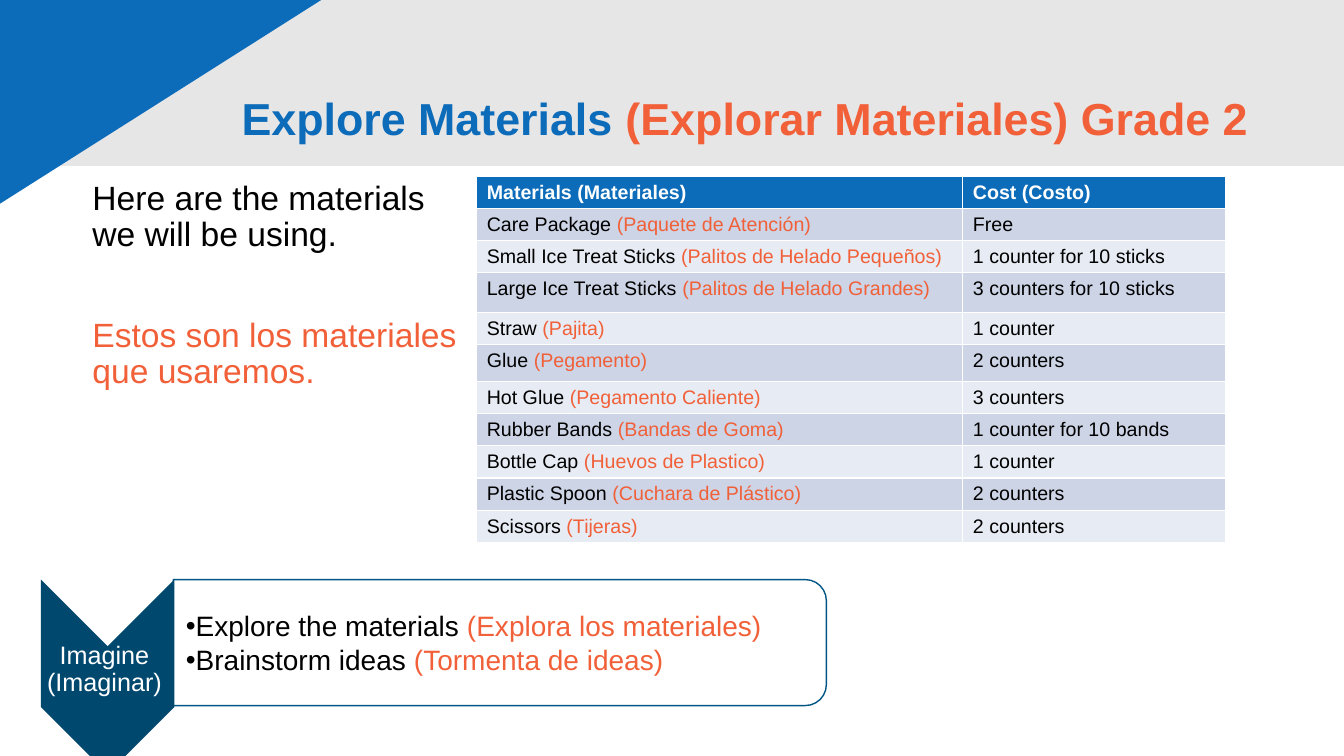
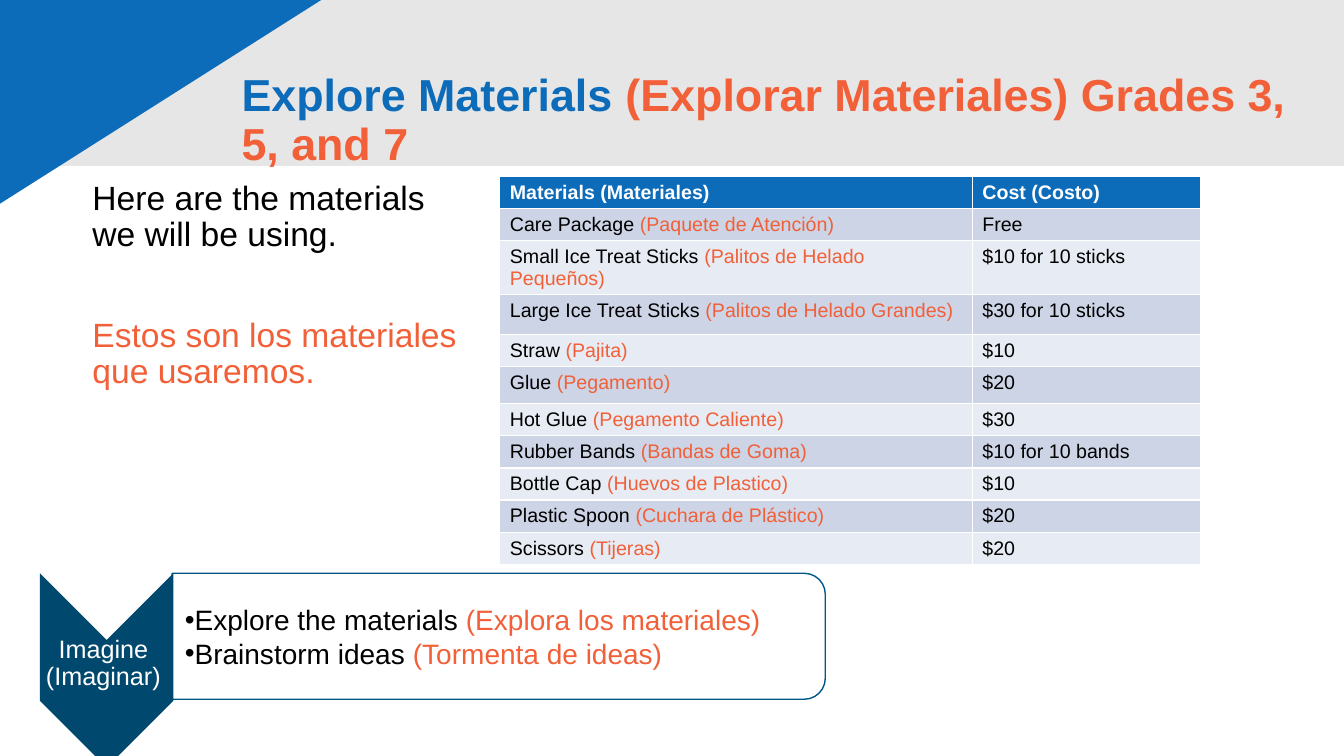
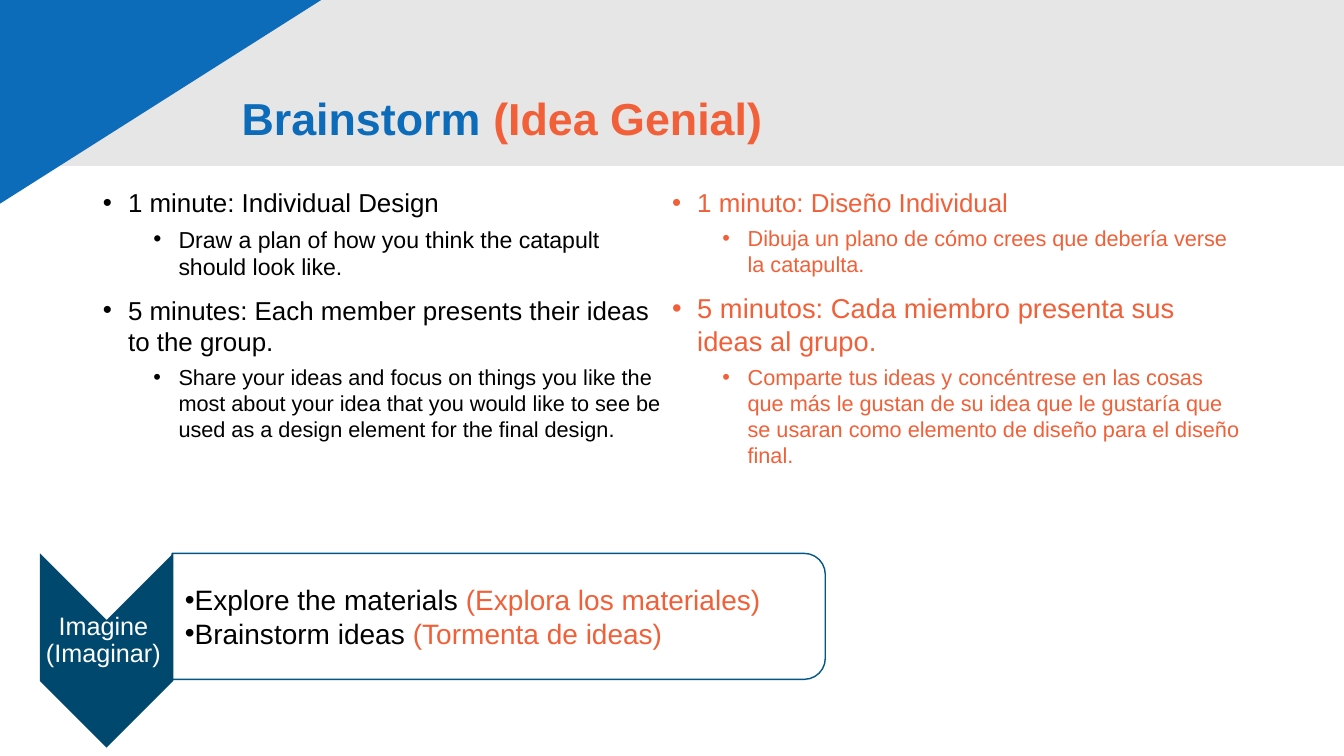
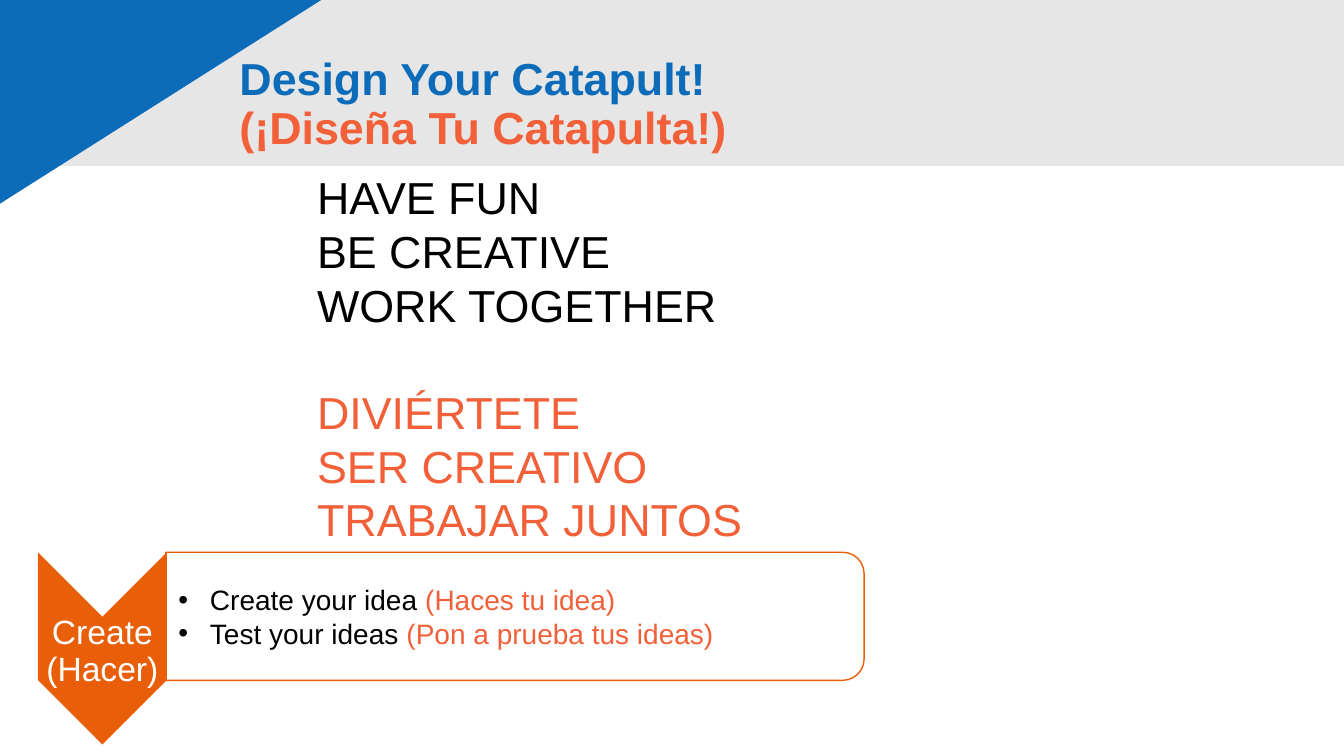
from lxml import etree
from pptx import Presentation
from pptx.dml.color import RGBColor
from pptx.enum.shapes import MSO_SHAPE
from pptx.enum.text import MSO_ANCHOR, MSO_AUTO_SIZE, PP_ALIGN
from pptx.oxml.ns import qn
from pptx.util import Pt

PX = 9525  # EMU in one px, 96 px to the inch
WIDE, HIGH = 1280, 720
FONT = "Arial"

BLUE = RGBColor(0x0D, 0x6C, 0xB9)
ORANGE = RGBColor(0xF1, 0x60, 0x38)
GREY = RGBColor(0xE7, 0xE6, 0xE6)
NAVY = RGBColor(0x00, 0x48, 0x6E)
TEAL = RGBColor(0x00, 0x57, 0x86)
RUST = RGBColor(0xE9, 0x5E, 0x09)
BLACK = RGBColor(0, 0, 0)
WHITE = RGBColor(0xFF, 0xFF, 0xFF)
BANDS = (RGBColor(0xE7, 0xEB, 0xF3), RGBColor(0xCC, 0xD4, 0xE6))

LEFT, CENTER = PP_ALIGN.LEFT, PP_ALIGN.CENTER
TOP, MIDDLE = MSO_ANCHOR.TOP, MSO_ANCHOR.MIDDLE
NO_FIT = MSO_AUTO_SIZE.NONE
RECT, CHEVRON = MSO_SHAPE.RECTANGLE, MSO_SHAPE.CHEVRON
TAB = MSO_SHAPE.ROUND_2_SAME_RECTANGLE

LIST_LAYOUT, PAIR_LAYOUT, TITLE_LAYOUT = 1, 3, 5


def px(*nums):
    return [round(n * PX) for n in nums]


def bullet(par, margin, hang, mark):
    """Set the indent in px and the bullet sign; no sign means no bullet."""
    props = par._p.get_or_add_pPr()
    for key, val in zip(("marL", "indent"), px(margin, -hang)):
        props.set(key, str(val))
    if mark:
        etree.SubElement(props, qn("a:buFont")).set("typeface", FONT)
        etree.SubElement(props, qn("a:buChar")).set("char", mark)
    else:
        etree.SubElement(props, qn("a:buNone"))


def runs(par, text, size, ink=BLACK, bold=False):
    """Write the text; what follows a bar is Spanish and orange."""
    for part, color in zip(text.split("|"), (ink, ORANGE)):
        if part:
            run = par.add_run()
            run.text = part
            form = {"name": FONT, "size": Pt(size), "bold": bold}
            for key, val in form.items():
                setattr(run.font, key, val)
            run.font.color.rgb = color


def fill(frame, lines, size=24, ink=BLACK, bold=False, anchor=TOP, pad=(10, 5, 10, 5),
         lead=1.0, gap=0, align=LEFT, margin=0, hang=0, mark=""):
    """Fill a frame; a line is a text, or a text and a dict of its own values."""
    sides = ("margin_left", "margin_top", "margin_right", "margin_bottom")
    form = dict(zip(sides, px(*pad)))
    form.update(word_wrap=True, auto_size=NO_FIT, vertical_anchor=anchor)
    for key, val in form.items():
        setattr(frame, key, val)
    base = dict(size=size, gap=gap, margin=margin, level=0)
    for num, line in enumerate(lines):
        text, own = (line, {}) if isinstance(line, str) else line
        look = {**base, **own}
        par = frame.add_paragraph() if num else frame.paragraphs[0]
        bullet(par, look["margin"], hang, mark)
        form = {"level": look["level"], "alignment": align, "line_spacing": lead,
                "space_before": Pt(look["gap"] if num else 0), "space_after": Pt(0)}
        for key, val in form.items():
            setattr(par, key, val)
        runs(par, text, look["size"], ink, bold)


class Deck:
    def __init__(self):
        self.prs = Presentation()
        self.prs.slide_width, self.prs.slide_height = px(WIDE, HIGH)
        self.slide = None

    def start(self, layout, lines, x=220, y=46, w=931):
        first = self.slide is None
        self.slide = self.prs.slides.add_slide(self.prs.slide_layouts[layout])
        if first:
            self.banner()
        self.holder(0, (x, y, w, 139), lines, size=32, ink=BLUE, bold=True,
                    anchor=MIDDLE, lead=0.9)

    def banner(self):
        """Draw the band and the corner, then move them to the master."""
        band = self.shape(RECT, 0, 0, WIDE, 158, GREY)
        pen = self.slide.shapes.build_freeform(0, 0, scale=PX)
        pen.add_line_segments([(306, 0), (0, 194)])
        corner = self.paint(pen.convert_to_shape(), BLUE)
        tree = self.prs.slide_master.shapes.element
        for num, item in enumerate((band, corner)):
            item.element.nvSpPr.cNvPr.set("id", str(100 + num))
            tree.insert(2 + num, item.element)

    def paint(self, item, color, edge=None):
        item.shadow.inherit = False
        item.fill.solid()
        item.fill.fore_color.rgb = color
        if edge is None:
            item.line.fill.background()
        else:
            item.line.color.rgb = edge
            item.line.width = Pt(1)
        return item

    def shape(self, kind, x, y, w, h, color, edge=None):
        item = self.slide.shapes.add_shape(kind, *px(x, y, w, h))
        return self.paint(item, color, edge)

    def turned(self, kind, x, y, w, h, color, edge=None):
        """Draw a shape turned by 90 degrees that fills the given box."""
        item = self.shape(kind, x + (w - h) / 2, y + (h - w) / 2, h, w, color, edge)
        item.rotation = 90

    def holder(self, idx, box, lines, **look):
        item = self.slide.placeholders[idx]
        for key, val in zip(("left", "top", "width", "height"), px(*box)):
            setattr(item, key, val)
        fill(item.text_frame, lines, **look)

    def text(self, x, y, w, h, lines, **look):
        box = self.slide.shapes.add_textbox(*px(x, y, w, h))
        fill(box.text_frame, lines, **look)

    def table(self, x, y, cols, rows, tall):
        """Draw a banded table; tall gives the heights of the higher rows."""
        highs = [tall.get(num, 23) for num in range(len(rows))]
        grid = self.slide.shapes.add_table(
            len(rows), len(cols), *px(x, y, sum(cols), sum(highs))).table
        for col, wide in zip(grid.columns, px(*cols)):
            col.width = wide
        for row, high in zip(grid.rows, px(*highs)):
            row.height = high
        for num, row in enumerate(rows):
            head = num == 0
            for col, text in enumerate(row):
                cell = grid.cell(num, col)
                cell.fill.solid()
                cell.fill.fore_color.rgb = BLUE if head else BANDS[num % 2]
                runs(cell.text_frame.paragraphs[0], text, 14,
                     WHITE if head else BLACK, head)

    def step(self, x, y, name, lines, color=NAVY, edge=TEAL, arrow=(127, 185),
             panel=(622, 120), size=18, label=(121, 86), hang=0):
        """Draw a down arrow with its name and a panel with its tasks.

        The label pair is the width of the name and the depth of its middle.
        """
        wide, high = panel
        side = x + arrow[0] - 1
        self.turned(TAB, side, y, wide, high, WHITE, edge)
        self.text(side, y + 6, wide - 6, high - 12, lines, size=20, anchor=MIDDLE,
                  pad=(12, 1, 1, 1), margin=hang, hang=hang, mark="•")
        self.turned(CHEVRON, x, y, *arrow, color)
        self.text(x, y + label[1] - 35, label[0], 70, [name], size=size, ink=WHITE,
                  anchor=MIDDLE, pad=(2, 2, 2, 2), lead=0.9, align=CENTER)


ITEMS = ["Care Package |(Paquete de Atención)",
         "Small Ice Treat Sticks |(Palitos de Helado Pequeños)",
         "Large Ice Treat Sticks |(Palitos de Helado Grandes)",
         "Straw |(Pajita)",
         "Glue |(Pegamento)",
         "Hot Glue |(Pegamento Caliente)",
         "Rubber Bands |(Bandas de Goma)",
         "Bottle Cap |(Huevos de Plastico)",
         "Plastic Spoon |(Cuchara de Plástico)",
         "Scissors| (Tijeras)"]
COUNTERS = ["Free", "1 counter for 10 sticks", "3 counters for 10 sticks",
            "1 counter", "2 counters", "3 counters", "1 counter for 10 bands",
            "1 counter", "2 counters", "2 counters"]
DOLLARS = ["Free", "$10 for 10 sticks", "$30 for 10 sticks", "$10", "$20", "$30",
           "$10 for 10 bands", "$10", "$20", "$20"]
INTRO = ["Here are the materials we will be using.",
         ("|Estos son los materiales que usaremos.", {"gap": 46})]
IMAGINE = ("Imagine (Imaginar)",
           ["Explore the materials |(Explora los materiales)",
            "Brainstorm ideas |(Tormenta de ideas)"])


def sub(size):
    return {"level": 1, "margin": 72, "gap": 5, "size": size}


PLAN = [
    ["1 minute: Individual Design",
     ("Draw a plan of how you think the catapult should look like.", sub(16.5)),
     "5 minutes: Each member presents their ideas to the group.",
     ("Share your ideas and focus on things you like the most about your idea that "
      "you would like to see be used as a design element for the final design.",
      sub(15.5))],
    ["|1 minuto: Diseño Individual",
     ("|Dibuja un plano de cómo crees que debería verse la catapulta.", sub(15.5)),
     ("|5 minutos: Cada miembro presenta sus ideas al grupo.", {"size": 19.5}),
     ("|Comparte tus ideas y concéntrese en las cosas que más le gustan de su idea que "
      "le gustaría que se usaran como elemento de diseño para el diseño final.",
      sub(15.5))],
]


def prices(deck, grade, costs, x, cols, spot):
    """Add a slide that lists the materials and what they cost."""
    deck.start(LIST_LAYOUT, ["Explore Materials |(Explorar Materiales) " + grade], w=1051)
    deck.holder(1, (78, 168, 376, 327), INTRO, lead=0.9)
    rows = [("Materials (Materiales)", "Cost (Costo)"), *zip(ITEMS, costs)]
    deck.table(x, 168, cols, rows, {3: 38, 5: 35})
    deck.step(*spot, *IMAGINE)


def plan(deck):
    deck.start(PAIR_LAYOUT, ["Brainstorm |(Idea Genial)"])
    for num, lines in enumerate(PLAN):
        deck.holder(num + 1, (88 + 542 * num, 173, 562, 329), lines, size=18.5,
                    gap=10, margin=24, hang=24, mark="•")
    deck.step(38, 527, *IMAGINE, label=(121, 83))


def design(deck):
    deck.start(TITLE_LAYOUT, ["Design Your Catapult!", "|(¡Diseña Tu Catapulta!)"],
               x=218, y=31)
    deck.text(292, 157, 746, 423,
              ["HAVE FUN", "BE CREATIVE", "WORK TOGETHER",
               ("|DIVIÉRTETE", {"gap": 38}), "|SER CREATIVO", "|TRABAJAR JUNTOS"],
              size=32)
    deck.step(36, 526, "Create (Hacer)",
              ["Create your idea |(Haces tu idea)",
               "Test your ideas |(Pon a prueba tus ideas)"],
              color=RUST, edge=RUST, arrow=(123, 183), panel=(665, 122),
              size=24, label=(123, 95), hang=30)


def main():
    deck = Deck()
    prices(deck, "Grade 2", COUNTERS, 454, (463, 250), (39, 552))
    prices(deck, "Grades 3, 5, and 7", DOLLARS, 476, (450, 217), (38, 546))
    plan(deck)
    design(deck)
    deck.prs.save("out.pptx")


if __name__ == "__main__":
    main()
